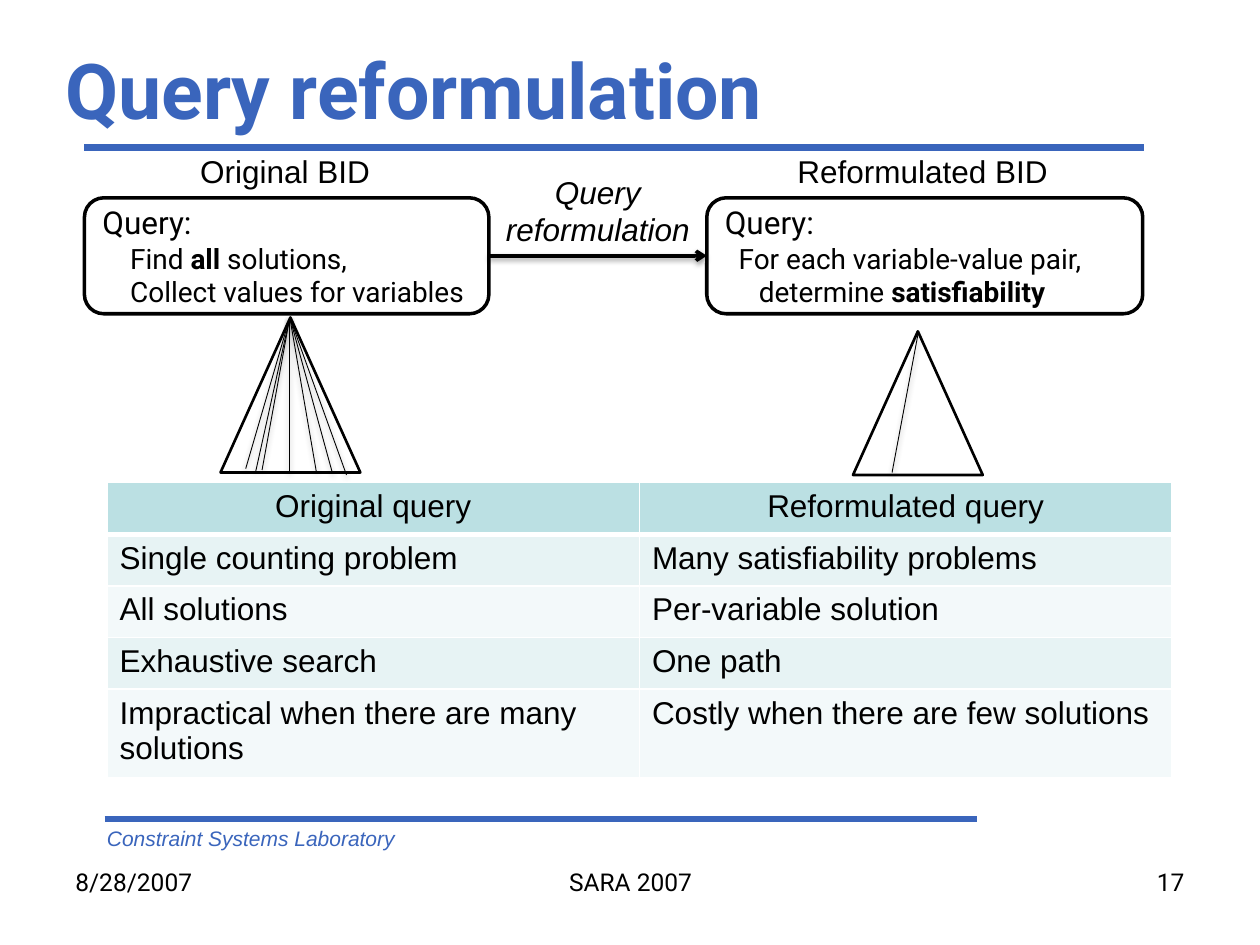
from lxml import etree
from pptx import Presentation
from pptx.dml.color import RGBColor
from pptx.enum.shapes import MSO_CONNECTOR, MSO_SHAPE
from pptx.enum.text import MSO_ANCHOR, PP_ALIGN
from pptx.oxml import parse_xml
from pptx.oxml.ns import nsdecls, qn
from pptx.util import Inches, Pt

BLUE, BLACK, WHITE = "3A65BC", "000000", "FFFFFF"
color = RGBColor.from_string
LEFT, CENTER, RIGHT = PP_ALIGN.LEFT, PP_ALIGN.CENTER, PP_ALIGN.RIGHT

prs = Presentation()
prs.slide_width, prs.slide_height = Inches(10), Inches(7.5)
slide = prs.slides.add_slide(prs.slide_layouts[6])


def add_text(box, text, size, font="Arial", ink=BLACK, align=LEFT,
             bold=False, italic=False, wrap=True, anchor=MSO_ANCHOR.TOP):
    frame = slide.shapes.add_textbox(*map(Inches, box)).text_frame
    frame.word_wrap = wrap
    frame.vertical_anchor = anchor
    frame.text = text
    for paragraph in frame.paragraphs:
        paragraph.alignment = align
        for run in paragraph.runs:
            run.font.size, run.font.name = Pt(size), font
            run.font.bold, run.font.italic = bold, italic
            run.font.color.rgb = color(ink)


def add_line(shapes, start, end, width, ink=BLACK, shadow=True):
    line = shapes.add_connector(MSO_CONNECTOR.STRAIGHT, *map(Inches, start + end))
    line.line.color.rgb = color(ink)
    line.line.width = Pt(width)
    effects = etree.SubElement(line._element.spPr, qn("a:effectLst"))
    if shadow:
        effects.append(parse_xml(
            f'<a:outerShdw {nsdecls("a")} blurRad="{Pt(3.1)}" dist="{Pt(1.6)}" '
            'dir="5400000" rotWithShape="0"><a:srgbClr val="000000">'
            '<a:alpha val="38000"/></a:srgbClr></a:outerShdw>'))
    return line


# Rules, laboratory name and title
add_line(slide.shapes, (0.67, 1.17), (9.08, 1.17), 4, BLUE, shadow=False)
add_line(slide.shapes, (0.83, 6.5), (7.75, 6.5), 4, BLUE, shadow=False)
add_text((0.75, 6.5, 5.25, 0.3), "Constraint Systems Laboratory", 12,
         ink=BLUE, italic=True)
add_text((0.42, 0.33, 9, 0.75), "Query reformulation", 44, "Roboto", BLUE,
         bold=True, anchor=MSO_ANCHOR.MIDDLE)

# Query boxes: each line is an indent and its runs of (text, bold)
queries = [
    (0.67, 3.21, [(0, [("Query:", False)]),
                  (0.22, [("Find ", False), ("all", True), (" solutions,", False)]),
                  (0.22, [("Collect values for variables", False)])]),
    (5.61, 3.46, [(0, [("Query:", False)]),
                  (0.11, [("For each variable-value pair,", False)]),
                  (0.27, [("determine ", False), ("satisfiability", True)])]),
]
query_boxes = []
for left, width, lines in queries:
    box = slide.shapes.add_shape(MSO_SHAPE.ROUNDED_RECTANGLE, Inches(left),
                                 Inches(1.57), Inches(width), Inches(0.92))
    box.shadow.inherit = False
    box.fill.solid()
    box.fill.fore_color.rgb = color(WHITE)
    box.line.color.rgb = color(BLACK)
    box.line.width = Pt(2)
    frame = box.text_frame
    frame.vertical_anchor = MSO_ANCHOR.MIDDLE
    for number, (indent, runs) in enumerate(lines):
        paragraph = frame.add_paragraph() if number else frame.paragraphs[0]
        paragraph.alignment = LEFT
        paragraph._p.get_or_add_pPr().set("marL", str(Inches(indent)))
        for text, bold in runs:
            run = paragraph.add_run()
            run.text = text
            run.font.name, run.font.bold = "Roboto", bold
            run.font.size = Pt(16 if number else 18)
            run.font.color.rgb = color(BLACK)
    query_boxes.append(box)

# Labels above the boxes
add_text((1.49, 1.16, 1.56, 0.4), "Original BID", 18, wrap=False)
add_text((6.23, 1.16, 2.21, 0.4), "Reformulated BID", 18, wrap=False)

# Reformulation arrow
arrow = add_line(slide.shapes, (3.88, 2.03), (5.61, 2.03), 2)
arrow.begin_connect(query_boxes[0], 3)
arrow.end_connect(query_boxes[1], 1)
etree.SubElement(arrow.line._get_or_add_ln(), qn("a:tailEnd")).set("type", "arrow")
add_text((3.91, 1.32, 1.67, 0.71), "Query\nreformulation", 18, align=CENTER,
         italic=True, wrap=False)

# Search trees: triangle box, apex, and the ends of the explored paths
trees = [
    ((1.75, 2.52, 1.11, 1.23), (2.3, 2.52),
     [(2.03, 3.74), (2.3, 3.75), (2.51, 3.74), (2.64, 3.76),
      (1.95, 3.72), (2.08, 3.73), (2.75, 3.77)]),
    ((6.77, 2.63, 1.03, 1.14), (7.29, 2.63), [(7.08, 3.75)]),
]
for bounds, apex, path_ends in trees:
    tree = slide.shapes.add_group_shape().shapes
    triangle = tree.add_shape(MSO_SHAPE.ISOSCELES_TRIANGLE, *map(Inches, bounds))
    triangle.shadow.inherit = False
    triangle.fill.solid()
    triangle.fill.fore_color.rgb = color(WHITE)
    triangle.line.color.rgb = color(BLACK)
    triangle.line.width = Pt(1.5)
    for path_end in path_ends:
        add_line(tree, apex, path_end, 0.5)

# Comparison table
comparison = [
    ("Original query", "Reformulated query"),
    ("Single counting problem", "Many satisfiability problems"),
    ("All solutions", "Per-variable solution"),
    ("Exhaustive search", "One path"),
    ("Impractical when there are many solutions",
     "Costly when there are few solutions"),
]
table = slide.shapes.add_table(len(comparison), 2, Inches(0.85), Inches(3.83),
                               Inches(8.45), Inches(2.33)).table
for row, texts in enumerate(comparison):
    table.rows[row].height = Inches(0.7 if row == len(comparison) - 1 else 0.41)
    for column, text in enumerate(texts):
        cell = table.cell(row, column)
        cell.text = text
        paragraph = cell.text_frame.paragraphs[0]
        paragraph.alignment = LEFT if row else CENTER
        font = paragraph.runs[0].font
        font.size, font.name, font.bold = Pt(18), "Arial", False
        font.color.rgb = color(BLACK)
        borders = cell._tc.get_or_add_tcPr()
        for side in ("lnL", "lnR", "lnT", "lnB"):
            width = 3 if row == 0 and side == "lnB" else 1
            borders.append(parse_xml(
                f'<a:{side} {nsdecls("a")} w="{Pt(width)}"><a:solidFill>'
                f'<a:srgbClr val="{WHITE}"/></a:solidFill></a:{side}>'))
        cell.fill.solid()
        band = "E7F3F4" if row % 2 else "F3F9FA"
        cell.fill.fore_color.rgb = color(band if row else "BBE0E3")

# Footer
for left, width, text, align in [(0.5, 2.33, "8/28/2007", LEFT),
                                 (3.42, 3.17, "SARA 2007", CENTER),
                                 (7.17, 2.33, "17", RIGHT)]:
    add_text((left, 6.83, width, 0.52), text, 14, "Roboto", align=align)

prs.save("out.pptx")
